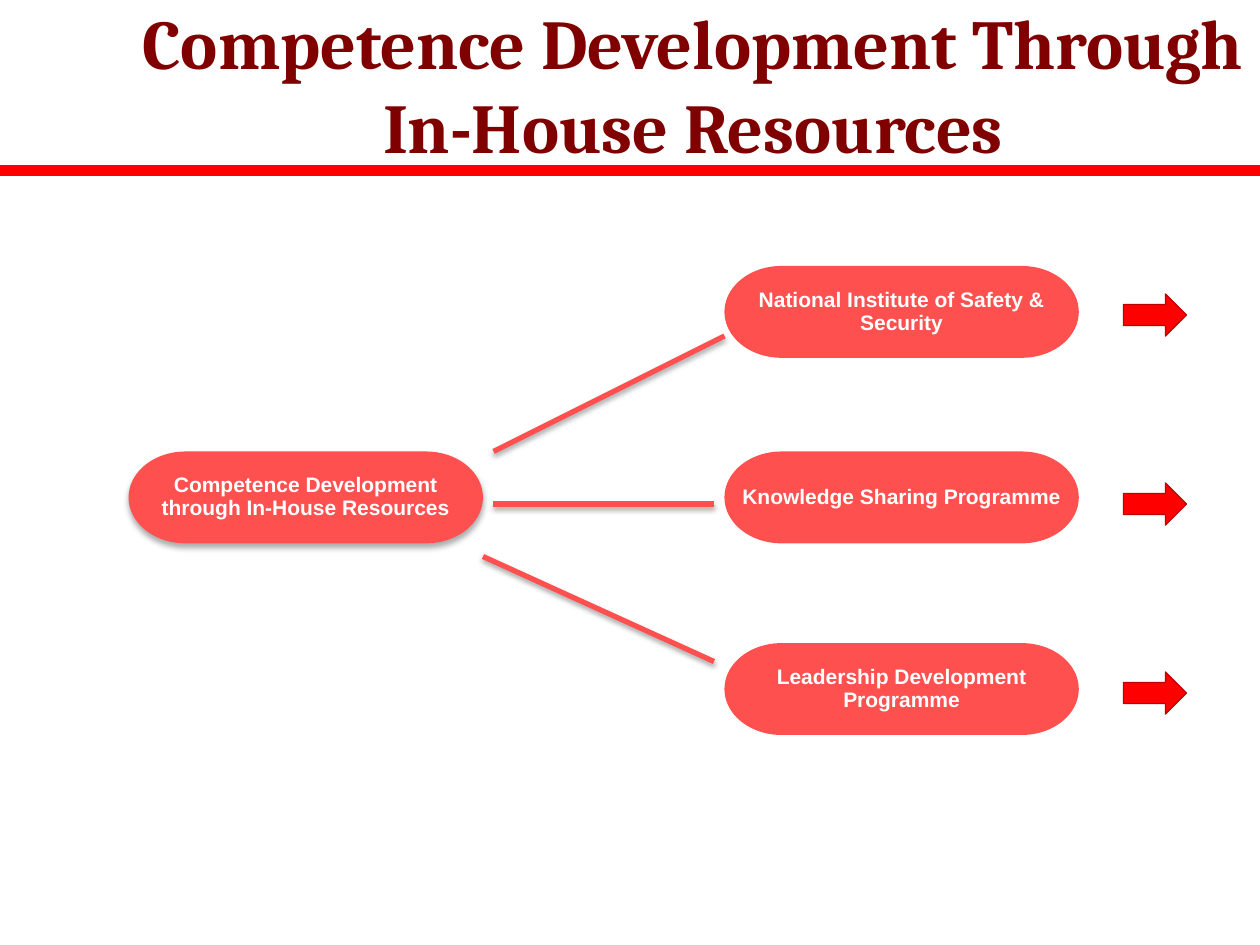
from dataclasses import dataclass

from lxml import etree
from pptx import Presentation
from pptx.dml.color import RGBColor
from pptx.enum.shapes import MSO_CONNECTOR, MSO_SHAPE
from pptx.enum.text import MSO_ANCHOR, MSO_AUTO_SIZE, PP_ALIGN
from pptx.oxml.ns import qn
from pptx.util import Pt

STRAIGHT = MSO_CONNECTOR.STRAIGHT
PILL = MSO_SHAPE.FLOWCHART_TERMINATOR
RIGHT_ARROW = MSO_SHAPE.RIGHT_ARROW
MIDDLE = MSO_ANCHOR.MIDDLE
CENTER = PP_ALIGN.CENTER
NO_AUTOFIT = MSO_AUTO_SIZE.NONE
TITLE_ONLY = 5


@dataclass(frozen=True)
class Theme:
    title_font: str = "Cambria"
    body_font: str = "Arial"
    title_size: float = 40
    body_size: float = 12
    maroon: RGBColor = RGBColor(0x80, 0x00, 0x00)
    red: RGBColor = RGBColor(0xFF, 0x00, 0x00)
    dark_red: RGBColor = RGBColor(0xC0, 0x00, 0x00)
    coral: RGBColor = RGBColor(0xFF, 0x50, 0x50)
    white: RGBColor = RGBColor(0xFF, 0xFF, 0xFF)
    # Shadows: opacity in percent, blur and distance in points
    pill_shadow: tuple = (32, 3.5, 2.2)
    line_shadow: tuple = (35, 3.1, 1.8)


class PageBuilder:
    def __init__(self, page, theme):
        self.page = page
        self.theme = theme

    def set_shadow(self, shape, shadow=None):
        """Replace the inherited shadow by a downward one, or by none."""
        properties = shape._element.spPr
        for old in properties.findall(qn("a:effectLst")):
            properties.remove(old)
        effects = etree.SubElement(properties, qn("a:effectLst"))
        if shadow:
            opacity, blur, distance = shadow
            outer = etree.SubElement(
                effects, qn("a:outerShdw"), blurRad=str(Pt(blur)),
                dist=str(Pt(distance)), dir="5400000", rotWithShape="0")
            color = etree.SubElement(outer, qn("a:srgbClr"), val="000000")
            etree.SubElement(color, qn("a:alpha"), val=str(opacity * 1000))

    def set_text(self, frame, text, font_name, size, color):
        frame.word_wrap = True
        frame.auto_size = NO_AUTOFIT
        frame.vertical_anchor = MIDDLE
        frame.text = text
        para = frame.paragraphs[0]
        para.alignment = CENTER
        para.font.name = font_name
        para.font.size = Pt(size)
        para.font.bold = True
        para.font.color.rgb = color
        return para

    def title(self, text, left, top, width, height):
        box = self.page.shapes.title
        box.left, box.top = Pt(left), Pt(top)
        box.width, box.height = Pt(width), Pt(height)
        self.set_text(box.text_frame, text, self.theme.title_font,
                      self.theme.title_size, self.theme.maroon)

    def line(self, start, end, color, weight, shadow=None):
        line = self.page.shapes.add_connector(
            STRAIGHT, *(Pt(value) for value in (*start, *end)))
        line.line.color.rgb = color
        line.line.width = Pt(weight)
        self.set_shadow(line, shadow)

    def shape(self, kind, left, top, width, height, fill):
        shape = self.page.shapes.add_shape(
            kind, Pt(left), Pt(top), Pt(width), Pt(height))
        shape.fill.solid()
        shape.fill.fore_color.rgb = fill
        return shape

    def pill(self, text, left, top, shadow=None):
        pill = self.shape(PILL, left, top, 202.5, 52.5, self.theme.coral)
        pill.line.fill.background()
        self.set_shadow(pill, shadow)
        frame = pill.text_frame
        frame.margin_left = frame.margin_right = Pt(0.6)
        frame.margin_top = frame.margin_bottom = Pt(0.6)
        para = self.set_text(frame, text, self.theme.body_font,
                             self.theme.body_size, self.theme.white)
        para.line_spacing = 0.9

    def arrow(self, left, top):
        arrow = self.shape(RIGHT_ARROW, left, top, 36, 24, self.theme.red)
        arrow.line.color.rgb = self.theme.dark_red
        arrow.line.width = Pt(0.75)
        self.set_shadow(arrow)


def main():
    deck = Presentation()
    deck.slide_width, deck.slide_height = Pt(720), Pt(540)
    page = deck.slides.add_slide(deck.slide_layouts[TITLE_ONLY])
    theme = Theme()
    builder = PageBuilder(page, theme)

    # Header
    builder.line((0, 97.5), (720, 97.5), theme.red, 6)
    builder.title("Competence Development Through In-House Resources",
                  72, 24, 648, 48)

    # Root topic
    root_top = 258
    builder.pill("Competence Development through In-House Resources",
                 73.5, root_top, theme.pill_shadow)

    # Branches: label, pill top, line start, line end
    branches = [
        ("National Institute of Safety & Security", 152, (282, 258), (414, 192)),
        ("Knowledge Sharing Programme", root_top, (282, 288), (408, 288)),
        ("Leadership Development Programme", 367.5, (276, 318), (408, 378)),
    ]
    for index, (label, top, start, end) in enumerate(branches):
        builder.pill(label, 414, top)
        builder.line(start, end, theme.coral, 3, theme.line_shadow)
        builder.arrow(642, 168 + 108 * index)

    deck.save("out.pptx")


if __name__ == "__main__":
    main()
